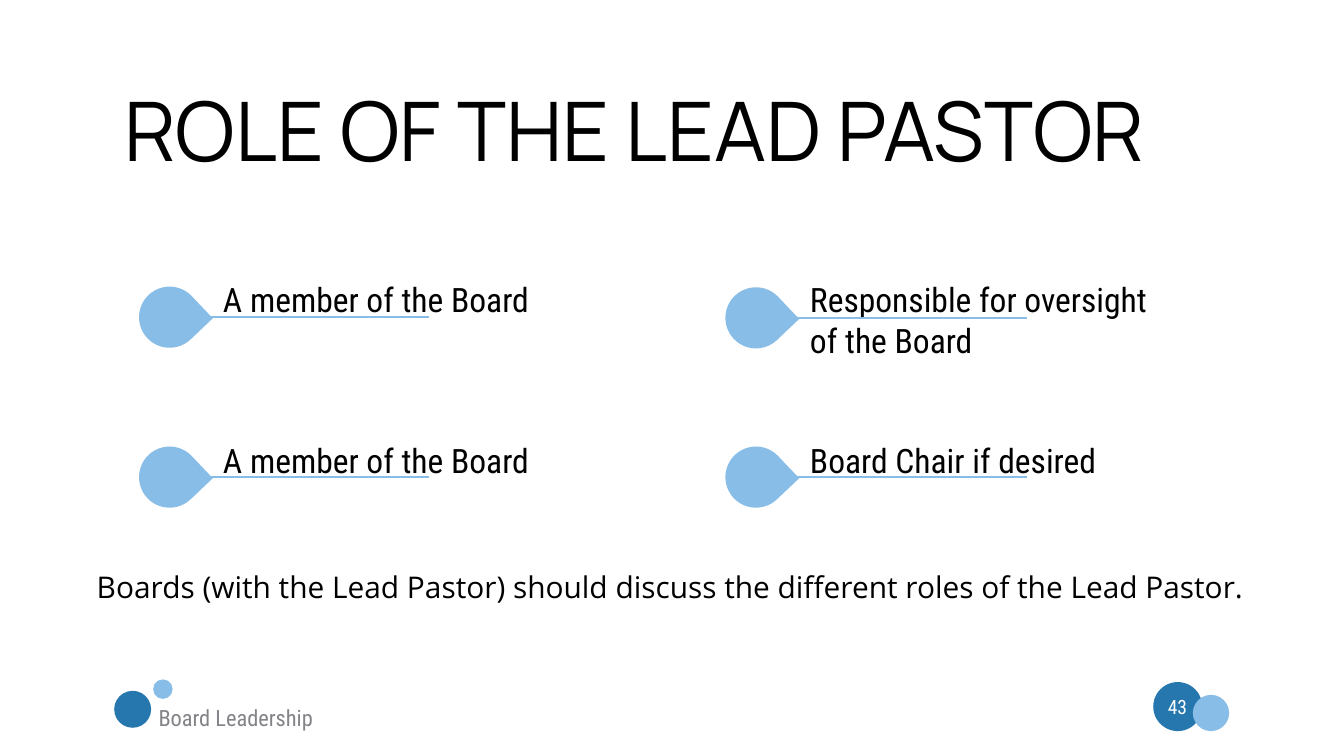
from dataclasses import dataclass

from pptx import Presentation
from pptx.dml.color import RGBColor
from pptx.enum.shapes import MSO_CONNECTOR, MSO_SHAPE
from pptx.enum.text import MSO_ANCHOR, MSO_AUTO_SIZE, PP_ALIGN
from pptx.oxml.ns import qn
from pptx.shapes.autoshape import Shape
from pptx.slide import Slide
from pptx.util import Inches, Pt

BLACK = RGBColor(0x00, 0x00, 0x00)
WHITE = RGBColor(0xFF, 0xFF, 0xFF)
GREY = RGBColor(0x84, 0x83, 0x88)
DARK_BLUE = RGBColor(0x26, 0x77, 0xAE)
LIGHT_BLUE = RGBColor(0x88, 0xBD, 0xE7)
CONDENSED = "Roboto Condensed"
DROP_SIZE = 0.91
LINE_LENGTH = 3.45


@dataclass
class Dot:
    left: float
    top: float
    size: float
    color: RGBColor


@dataclass
class Role:
    text: str
    drop_left: float
    line_left: float
    text_left: float
    line_top: float
    text_top: float
    text_height: float = 0.76


DOTS = [
    Dot(17.17, 10.15, 0.73, DARK_BLUE),
    Dot(1.7, 10.28, 0.55, DARK_BLUE),
    Dot(2.28, 10.11, 0.29, LIGHT_BLUE),
    Dot(17.76, 10.34, 0.54, LIGHT_BLUE),
]
ROLES = [
    Role("A member of the Board", 2.07, 2.94, 3.17, 4.72, 4.08),
    Role("Responsible for oversight of the Board", 10.8, 11.84, 11.91, 4.73, 4.08, 1.36),
    Role("A member of the Board", 2.07, 2.94, 3.17, 7.1, 6.47),
    Role("Board Chair if desired", 10.8, 11.84, 11.91, 7.1, 6.47),
]


def write(sp: Shape, text: str, *, size: float, font: str = CONDENSED,
          color: RGBColor = BLACK, align: PP_ALIGN = PP_ALIGN.LEFT,
          spacing: float = 1.0, inset: float = 0.15) -> None:
    tf = sp.text_frame
    tf.word_wrap = True
    tf.auto_size = MSO_AUTO_SIZE.NONE
    tf.vertical_anchor = MSO_ANCHOR.TOP
    tf.margin_left = tf.margin_right = Inches(inset)
    tf.margin_top = tf.margin_bottom = Inches(inset / 2)
    p = tf.paragraphs[0]
    p.alignment = align
    p.line_spacing = spacing
    r = p.add_run()
    r.text = text
    r.font.size = Pt(size)
    r.font.name = font
    r.font.color.rgb = color


def add_text(s: Slide, left: float, top: float, width: float, height: float,
             text: str, **style) -> None:
    box = s.shapes.add_textbox(Inches(left), Inches(top), Inches(width), Inches(height))
    write(box, text, **style)


def add_filled(s: Slide, kind: MSO_SHAPE, left: float, top: float, size: float,
               color: RGBColor) -> Shape:
    sp = s.shapes.add_shape(kind, Inches(left), Inches(top), Inches(size), Inches(size))
    sp.shadow.inherit = False
    sp.fill.solid()
    sp.fill.fore_color.rgb = color
    sp.line.fill.background()
    return sp


def add_role(s: Slide, role: Role) -> None:
    add_text(s, role.text_left, role.text_top, 5.33, role.text_height, role.text, size=36)
    y = Inches(role.line_top)
    line = s.shapes.add_connector(MSO_CONNECTOR.STRAIGHT, Inches(role.line_left), y,
                                  Inches(role.line_left + LINE_LENGTH), y)
    line.line.color.rgb = LIGHT_BLUE
    line.line.width = Pt(2.25)
    sp_pr = line._element.spPr
    sp_pr.append(sp_pr.makeelement(qn("a:effectLst"), {}))
    drop = add_filled(s, MSO_SHAPE.TEAR, role.drop_left, role.line_top - DROP_SIZE / 2,
                      DROP_SIZE, LIGHT_BLUE)
    drop.rotation = 46.5


def main() -> None:
    prs = Presentation()
    prs.slide_width, prs.slide_height = Inches(20.01), Inches(11.25)
    s = prs.slides.add_slide(prs.slide_layouts[5])
    s.background.fill.solid()
    s.background.fill.fore_color.rgb = WHITE

    title = s.shapes.title
    title.left, title.top = Inches(1.7), Inches(1.1)
    title.width, title.height = Inches(16.79), Inches(1.63)
    write(title, "ROLE OF THE LEAD PASTOR", size=88, font="Manrope")

    for dot in DOTS:
        add_filled(s, MSO_SHAPE.OVAL, dot.left, dot.top, dot.size, dot.color)
    add_text(s, 17.17, 10.29, 0.72, 0.6, "43", size=21, color=WHITE,
             align=PP_ALIGN.CENTER, inset=0.1)
    add_text(s, 2.21, 10.4, 2.65, 0.56, "Board Leadership", size=24, color=GREY)

    for role in ROLES:
        add_role(s, role)
    add_text(s, 1.29, 8.12, 17.43, 0.87,
             "Boards (with the Lead Pastor) should discuss the different roles of the Lead Pastor.",
             size=32, font="Open Sans", spacing=1.5)
    prs.save("out.pptx")


if __name__ == "__main__":
    main()
